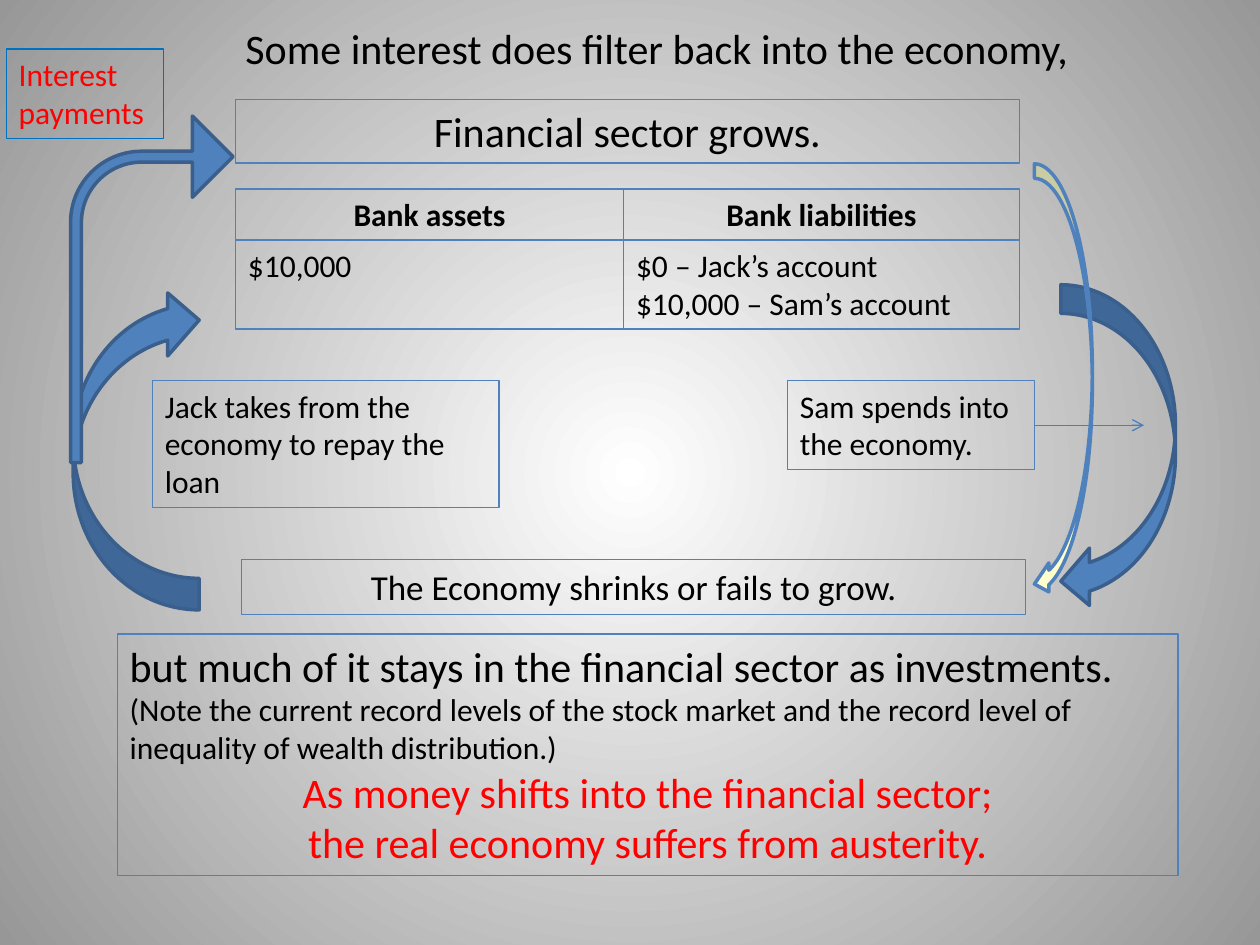
"""Build a slide on how money shifts from the economy into the financial sector."""
import pptx
import pptx.dml.color
import pptx.enum.dml
import pptx.enum.shapes
import pptx.enum.text
import pptx.oxml
import pptx.oxml.ns
import pptx.util

Pt = pptx.util.Pt
SHAPES = pptx.enum.shapes.MSO_SHAPE
LEFT = pptx.enum.text.PP_ALIGN.LEFT
CENTER = pptx.enum.text.PP_ALIGN.CENTER
FONT = "Calibri"
COLORS = {
    "text": "000000",
    "alert": "FF0000",
    "blue": "4F81BD",
    "dark_blue": "3A5F8C",
    "label_line": "0070C0",
    "pointer": "4B7EBC",
    "cream": "FFFFCC",
    "glow": "FFFFFF",
    "edge": "979797",
}


def rgb(name):
    """Return the named colour."""
    return pptx.dml.color.RGBColor.from_string(COLORS[name])


def paint_background(page):
    """Fill the page with a gradient spreading from its centre."""
    fill = page.background.fill
    fill.gradient()
    for stop, name in zip(fill.gradient_stops, ("glow", "edge")):
        stop.color.rgb = rgb(name)
    gradient = page.element.find(".//" + pptx.oxml.ns.qn("a:gradFill"))
    linear = gradient.find(pptx.oxml.ns.qn("a:lin"))
    circle = pptx.oxml.parse_xml(
        f'<a:path {pptx.oxml.ns.nsdecls("a")} path="circle">'
        '<a:fillToRect l="50000" t="50000" r="50000" b="50000"/></a:path>'
    )
    gradient.replace(linear, circle)


def set_font(font, size, color="text", bold=False):
    """Set the typeface, size, colour and weight of a font."""
    font.name = FONT
    font.size = Pt(size)
    font.bold = bold
    font.color.rgb = rgb(color)


def write_lines(frame, lines, size, align=LEFT, color="text", bold=False):
    """Write each line as a paragraph in a wrapping text frame."""
    frame.word_wrap = True
    frame.auto_size = pptx.enum.text.MSO_AUTO_SIZE.SHAPE_TO_FIT_TEXT
    frame.vertical_anchor = pptx.enum.text.MSO_ANCHOR.TOP
    for index, line in enumerate(lines):
        para = frame.add_paragraph() if index else frame.paragraphs[0]
        para.text = line
        para.alignment = align
        set_font(para.font, size, color, bold)


def add_outline(page, left, top, width, height, line="blue"):
    """Add an unfilled rectangle with a thin outline."""
    shape = page.shapes.add_shape(
        SHAPES.RECTANGLE, Pt(left), Pt(top), Pt(width), Pt(height)
    )
    shape.shadow.inherit = False
    shape.fill.background()
    shape.line.color.rgb = rgb(line)
    shape.line.width = Pt(0.75)
    return shape


def add_arrow(page, kind, left, top, width, height, fill="blue", line="dark_blue"):
    """Add a filled block arrow."""
    arrow = page.shapes.add_shape(kind, Pt(left), Pt(top), Pt(width), Pt(height))
    arrow.shadow.inherit = False
    arrow.fill.solid()
    arrow.fill.fore_color.rgb = rgb(fill)
    arrow.line.color.rgb = rgb(line)
    arrow.line.width = Pt(2)
    return arrow


def add_pointer(page, left, top, width):
    """Add a thin horizontal line with an open arrowhead on the right."""
    pointer = page.shapes.add_connector(
        pptx.enum.shapes.MSO_CONNECTOR.STRAIGHT,
        Pt(left), Pt(top), Pt(left + width), Pt(top),
    )
    pointer.line.color.rgb = rgb("pointer")
    pointer.line.width = Pt(0.75)
    properties = pointer.element.spPr
    namespace = pptx.oxml.ns.nsdecls("a")
    properties.find(pptx.oxml.ns.qn("a:ln")).append(
        pptx.oxml.parse_xml(f'<a:tailEnd {namespace} type="arrow"/>')
    )
    properties.append(pptx.oxml.parse_xml(f"<a:effectLst {namespace}/>"))


def add_heading(page, left, top, width, height):
    """Add the heading above the diagram."""
    box = page.shapes.add_textbox(Pt(left), Pt(top), Pt(width), Pt(height))
    write_lines(
        box.text_frame, ["Some interest does filter back into the economy,"], 24
    )


def add_balance_sheet(page, left, top, width):
    """Add the bank's assets and liabilities as a grid of two columns."""
    assets_width = 221.8
    columns = [
        (0, assets_width, "Bank assets", ["$10,000"]),
        (assets_width, width - assets_width, "Bank liabilities",
         ["$0 – Jack’s account", "$10,000 – Sam’s account"]),
    ]
    for offset, column_width, title, entries in columns:
        head = add_outline(page, left + offset, top, column_width, 29.1)
        write_lines(head.text_frame, [title], 18, CENTER, bold=True)
        body = add_outline(page, left + offset, top + 29.1, column_width, 50.9)
        write_lines(body.text_frame, entries, 18)


def add_sectors(page, left, top, width):
    """Add the financial sector, its balance sheet and the economy below."""
    finance = add_outline(page, left, top, width, 36.35)
    write_lines(finance.text_frame, ["Financial sector grows."], 24, CENTER)
    add_balance_sheet(page, left, top + 51.1, width)
    economy = add_outline(page, left + 3.6, top + 262.8, width, 31.5)
    write_lines(
        economy.text_frame, ["The Economy shrinks or fails to grow."], 20, CENTER
    )


def add_repayments(page, left, top):
    """Add the flows from the economy up to the bank."""
    loan = add_arrow(
        page, SHAPES.CURVED_LEFT_ARROW, left + 38.2, top + 136.8, 72, 183.6
    )
    loan.rotation = 180
    jack = add_outline(page, left + 83.5, top + 189.3, 198, 72.7)
    write_lines(
        jack.text_frame, ["Jack takes from the economy to repay the loan"], 18
    )
    label = add_outline(page, left, top, 90, 50.9, "label_line")
    write_lines(label.text_frame, ["Interest payments"], 18, color="alert")
    interest = add_arrow(page, SHAPES.BENT_ARROW, left + 36.7, top + 38.2, 92.9, 198)
    for index, value in enumerate((0.067, 0.25, 0.25, 0.438)):
        interest.adjustments[index] = value


def add_spending(page, left, top):
    """Add the flows from the bank back down to the economy."""
    add_arrow(page, SHAPES.CURVED_LEFT_ARROW, left + 156.2, top + 69.1, 65.5, 185.8)
    sam = add_outline(page, left, top + 123.8, 141.1, 50.9)
    write_lines(sam.text_frame, ["Sam spends into the economy."], 18)
    add_arrow(
        page, SHAPES.CURVED_LEFT_ARROW, left + 141.1, top, 33.1, 248.4, "cream", "blue"
    )
    add_pointer(page, left + 141.1, top + 149.4, 62.6)


def add_conclusion(page, left, top, width, height):
    """Add the closing statement with its note and warning."""
    frame = add_outline(page, left, top, width, height).text_frame
    warning = [
        "As money shifts into the financial sector;",
        "the real economy suffers from austerity.",
    ]
    write_lines(frame, ["", *warning], 24, CENTER, "alert")
    statement = frame.paragraphs[0]
    statement.alignment = LEFT
    parts = [
        ("but much of it stays in the financial sector as investments.", 24),
        (" ", 20),
        ("(Note the current record levels of the stock market and the record "
         "level of inequality of wealth distribution.)", 18),
    ]
    for text, size in parts:
        span = statement.add_run()
        span.text = text
        set_font(span.font, size)


def main():
    """Build the deck and save it."""
    deck = pptx.Presentation()
    deck.slide_width, deck.slide_height = Pt(720), Pt(540)
    page = deck.slides.add_slide(deck.slide_layouts[6])
    paint_background(page)
    add_sectors(page, 134.6, 56.9, 447.9)
    add_repayments(page, 3.6, 28.1)
    add_spending(page, 450, 93.6)
    add_conclusion(page, 67, 362.2, 606.2, 138.2)
    add_heading(page, 133.2, 9.4, 520.6, 36.35)
    deck.save("out.pptx")


if __name__ == "__main__":
    main()
